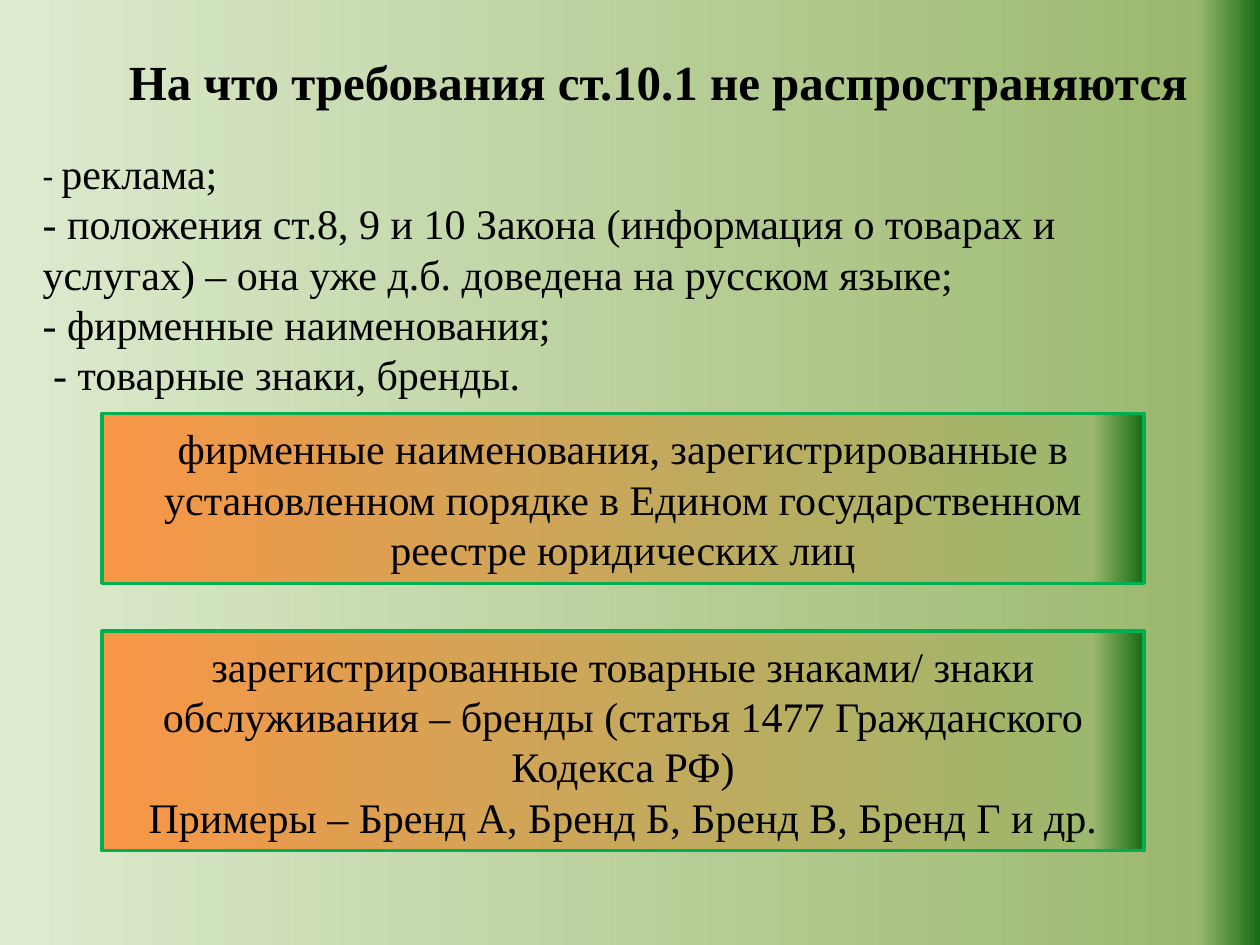
from copy import deepcopy

from pptx import Presentation
from pptx.dml.color import RGBColor
from pptx.enum.shapes import MSO_SHAPE as Shape
from pptx.enum.text import MSO_ANCHOR as Anchor, MSO_AUTO_SIZE as AutoSize, PP_ALIGN as Align
from pptx.oxml.ns import qn
from pptx.util import Inches, Pt

COLORS = {
    "text": "000000",
    "mint": "DDEBCF",
    "orange": "F79646",
    "olive": "9CB86E",
    "forest": "156B13",
    "border": "00B050",
}
SERIF = "Times New Roman"


def paint_gradient(fill, owner, first_color):
    """Fill left to right from first_color through olive to a forest-green edge."""
    fill.gradient()
    fill.gradient_angle = 0
    stop_list = owner.find(".//" + qn("a:gsLst"))
    stop_list.append(deepcopy(stop_list[-1]))
    steps = [(0, first_color), (0.95, "olive"), (1, "forest")]
    for stop, (position, color) in zip(fill.gradient_stops, steps):
        stop.position = position
        stop.color.rgb = RGBColor.from_string(COLORS[color])


def write_paragraphs(frame, paragraphs, align, bold=False):
    """Write paragraphs, each a list of (text, size, font) runs."""
    for number, runs in enumerate(paragraphs):
        para = frame.add_paragraph() if number else frame.paragraphs[0]
        para.alignment = align
        for text, size, font in runs:
            span = para.add_run()
            span.text = text
            span.font.size = Pt(size)
            span.font.name = font
            span.font.bold = bold
            span.font.color.rgb = RGBColor.from_string(COLORS["text"])


deck = Presentation()
deck.slide_width, deck.slide_height = Inches(10), Inches(7.5)
page = deck.slides.add_slide(deck.slide_layouts[5])
paint_gradient(page.background.fill, page.element, "mint")

margin = Inches(0.81)

# Title
title = page.shapes.title
title.left, title.top, title.width, title.height = margin, Inches(0.36), Inches(8.83), Inches(0.57)
title.text_frame.word_wrap = False
title.text_frame.auto_size = AutoSize.SHAPE_TO_FIT_TEXT
title.text_frame.vertical_anchor = Anchor.TOP
write_paragraphs(
    title.text_frame,
    [[("На что требования ст.10.1 не распространяются", 28, SERIF)]],
    Align.CENTER,
    bold=True,
)

# Exemptions
exemptions = page.shapes.add_textbox(Inches(0.24), Inches(1.12), Inches(9.53), Inches(2.12))
exemptions.text_frame.word_wrap = True
exemptions.text_frame.auto_size = AutoSize.SHAPE_TO_FIT_TEXT
write_paragraphs(
    exemptions.text_frame,
    [
        [("- ", 20, "Calibri"), ("реклама;", 24, SERIF)],
        [("- положения ст.8, 9 и 10 Закона (информация о товарах и услугах) – "
          "она уже д.б. доведена на русском языке;", 24, SERIF)],
        [("- фирменные наименования;", 24, SERIF)],
        [(" - товарные знаки, бренды.", 24, SERIF)],
    ],
    Align.LEFT,
)

# Explanation panels: top, height, lines
panels = [
    (3.28, 1.35, [
        "фирменные наименования, зарегистрированные в установленном порядке "
        "в Едином государственном реестре юридических лиц",
    ]),
    (5.01, 1.74, [
        "зарегистрированные товарные знаками/ знаки обслуживания – бренды "
        "(статья 1477 Гражданского Кодекса РФ)",
        "Примеры – Бренд А, Бренд Б, Бренд В, Бренд Г и др.",
    ]),
]
for top, height, lines in panels:
    box = page.shapes.add_shape(Shape.RECTANGLE, margin, Inches(top), Inches(8.27), Inches(height))
    box.shadow.inherit = False
    paint_gradient(box.fill, box.element, "orange")
    box.line.color.rgb = RGBColor.from_string(COLORS["border"])
    box.line.width = Pt(2)
    box.text_frame.word_wrap = True
    box.text_frame.vertical_anchor = Anchor.MIDDLE
    write_paragraphs(box.text_frame, [[(line, 24, SERIF)] for line in lines], Align.CENTER)

deck.save("out.pptx")
